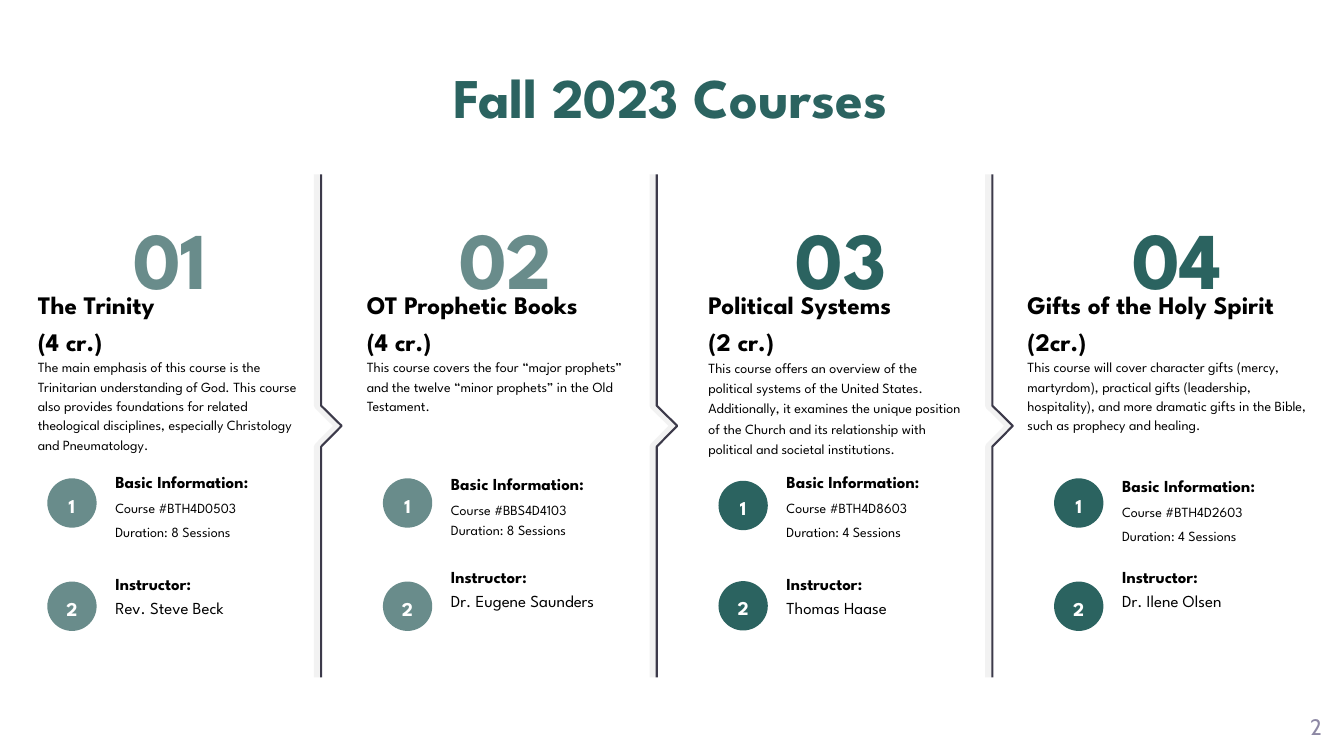
from dataclasses import dataclass

from pptx import Presentation
from pptx.dml.color import RGBColor
from pptx.enum.shapes import MSO_SHAPE
from pptx.enum.text import MSO_ANCHOR, PP_ALIGN
from pptx.util import Inches, Pt

COLORS = {
    "dark": "2B6360",
    "soft": "698C8B",
    "ink": "000000",
    "white": "FFFFFF",
    "line": "3C3A4A",
    "line_shade": "F2F2F2",
    "page": "8D88A4",
}
COURSE_PITCH = 24.97  # percent of the slide's width


@dataclass
class Line:
    """One paragraph of text and its look."""
    text: str
    size: float
    bold: bool = False
    color: str = "ink"
    align: PP_ALIGN = PP_ALIGN.LEFT
    spacing: float = 1.2
    before: float = 0
    after: float = 0
    font: str = "League Spartan"


@dataclass
class Course:
    number: str
    color: str
    name: str
    credits: str
    description: str
    code: str
    duration: str
    instructor: str
    text_left: float
    text_width: float
    text_height: float = 17.8
    text_spacing: float = 1.15
    text_after: float = 8
    info_top: float = 61.47
    duration_before: float = 6
    instructor_top: float = 74.93
    badge_tops: tuple = (63.27, 76.93)


COURSES = [
    Course("01", "soft", "The Trinity", "(4 cr.)",
           "The main emphasis of this course is the Trinitarian understanding of God. "
           "This course also provides foundations for related theological disciplines, "
           "especially Christology and Pneumatology.",
           "BTH4D0503", "8 Sessions", "Rev. Steve Beck", 2.44, 20.7),
    Course("02", "soft", "OT Prophetic Books", "(4 cr.)",
           "This course covers the four “major prophets” and the twelve “minor "
           "prophets” in the Old Testament.",
           "BBS4D4103", "8 Sessions", "Dr. Eugene Saunders", 26.92, 20.7,
           text_height=21.33, duration_before=0, instructor_top=74),
    Course("03", "dark", "Political Systems", "(2 cr.)",
           "This course offers an overview of the political systems of the United States. "
           "Additionally, it examines the unique position of the Church and its "
           "relationship with political and societal institutions.",
           "BTH4D8603", "4 Sessions", "Thomas Haase", 52.34, 19.54,
           text_spacing=1.2, text_after=0, badge_tops=(63.6, 76.87)),
    Course("04", "dark", "Gifts of the Holy Spirit", "(2cr.)",
           "This course will cover character gifts (mercy, martyrdom), practical gifts "
           "(leadership, hospitality), and more dramatic gifts in the Bible, such as "
           "prophecy and healing.",
           "BTH4D2603", "4 Sessions", "Dr. Ilene Olsen", 76.08, 21.93,
           info_top=62, instructor_top=74),
]


class CourseSlide:
    """Places styled elements; every length is a percentage of the slide's size."""

    def __init__(self, presentation):
        self.width = presentation.slide_width
        self.height = presentation.slide_height
        self.slide = presentation.slides.add_slide(presentation.slide_layouts[6])

    def across(self, share):
        return round(self.width * share / 100)

    def down(self, share):
        return round(self.height * share / 100)

    def box(self, left, top, width, height):
        return self.across(left), self.down(top), self.across(width), self.down(height)

    def color(self, name):
        return RGBColor.from_string(COLORS[name])

    def fill_frame(self, frame, lines, anchor):
        frame.word_wrap = True
        frame.vertical_anchor = anchor
        for index, line in enumerate(lines):
            paragraph = frame.add_paragraph() if index else frame.paragraphs[0]
            paragraph.alignment = line.align
            paragraph.line_spacing = line.spacing
            paragraph.space_before = Pt(line.before)
            paragraph.space_after = Pt(line.after)
            run = paragraph.add_run()
            run.text = line.text
            run.font.name = line.font
            run.font.size = Pt(line.size)
            run.font.bold = line.bold
            run.font.color.rgb = self.color(line.color)

    def text(self, area, *lines, anchor=MSO_ANCHOR.TOP, right=0.37, bottom=0.33):
        frame = self.slide.shapes.add_textbox(*self.box(*area)).text_frame
        frame.margin_right = self.across(right)
        frame.margin_bottom = self.down(bottom)
        self.fill_frame(frame, lines, anchor)

    def badge(self, left, top, label, color):
        shape = self.slide.shapes.add_shape(MSO_SHAPE.OVAL, *self.box(left, top, 3.67, 6.53))
        shape.shadow.inherit = False
        shape.fill.solid()
        shape.fill.fore_color.rgb = self.color(color)
        shape.line.fill.background()
        frame = shape.text_frame
        frame.margin_left = frame.margin_right = frame.margin_top = frame.margin_bottom = 0
        self.fill_frame(frame, [Line(label, 28, True, "white", PP_ALIGN.CENTER)],
                        MSO_ANCHOR.MIDDLE)

    def divider(self, left, color, weight):
        """Draw a vertical line with an arrow-like notch pointing right."""
        outline = [(0, 23.07), (0, 53.67), (1.52, 56.33), (0, 59.07), (0, 89.6)]
        points = [(self.across(left + x), self.down(y)) for x, y in outline]
        builder = self.slide.shapes.build_freeform(*points[0])
        builder.add_line_segments(points[1:], close=False)
        shape = builder.convert_to_shape()
        shape.shadow.inherit = False
        shape.fill.background()
        shape.line.color.rgb = self.color(color)
        shape.line.width = Pt(weight)

    def course(self, offset, course):
        self.text((3.41 + offset, 24.8, 18.52, 15.13),
                  Line(course.number, 115, True, course.color, PP_ALIGN.CENTER))
        self.text((course.text_left, 37.2, course.text_width, course.text_height),
                  Line(course.name, 36, True),
                  Line(course.credits, 36, True),
                  Line(course.description, 20, spacing=course.text_spacing,
                       after=course.text_after))
        self.text((8.21 + offset, course.info_top, 14.44, 10.47),
                  Line("Basic Information:", 24, True),
                  Line(f"Course #{course.code}", 20, before=6),
                  Line(f"Duration: {course.duration}", 20, before=course.duration_before),
                  anchor=MSO_ANCHOR.MIDDLE)
        self.text((8.21 + offset, course.instructor_top, 14.44, 10.47),
                  Line("Instructor:", 24, True),
                  Line(course.instructor, 24),
                  anchor=MSO_ANCHOR.MIDDLE, bottom=3.53)
        for label, top in zip("12", course.badge_tops):
            self.badge(3.52 + offset, top, label, course.color)


def main():
    presentation = Presentation()
    presentation.slide_width = Inches(26.67)
    presentation.slide_height = Inches(15)
    page = CourseSlide(presentation)

    page.text((89.88, 92.27, 10.24, 6),
              Line("2", 32, color="page", align=PP_ALIGN.RIGHT, spacing=1.5, font="Cabin"),
              anchor=MSO_ANCHOR.MIDDLE, right=1.76)
    page.text((7.5, 8, 84.74, 10.53),
              Line("Fall 2023 Courses", 80, True, "dark", PP_ALIGN.CENTER, spacing=1.0))
    for index in range(len(COURSES) - 1):
        left = 23.62 + index * COURSE_PITCH
        page.divider(left, "line_shade", 10)
        page.divider(left + 0.28, "line", 3)
    for index, course in enumerate(COURSES):
        page.course(index * COURSE_PITCH, course)

    presentation.save("out.pptx")


if __name__ == "__main__":
    main()
